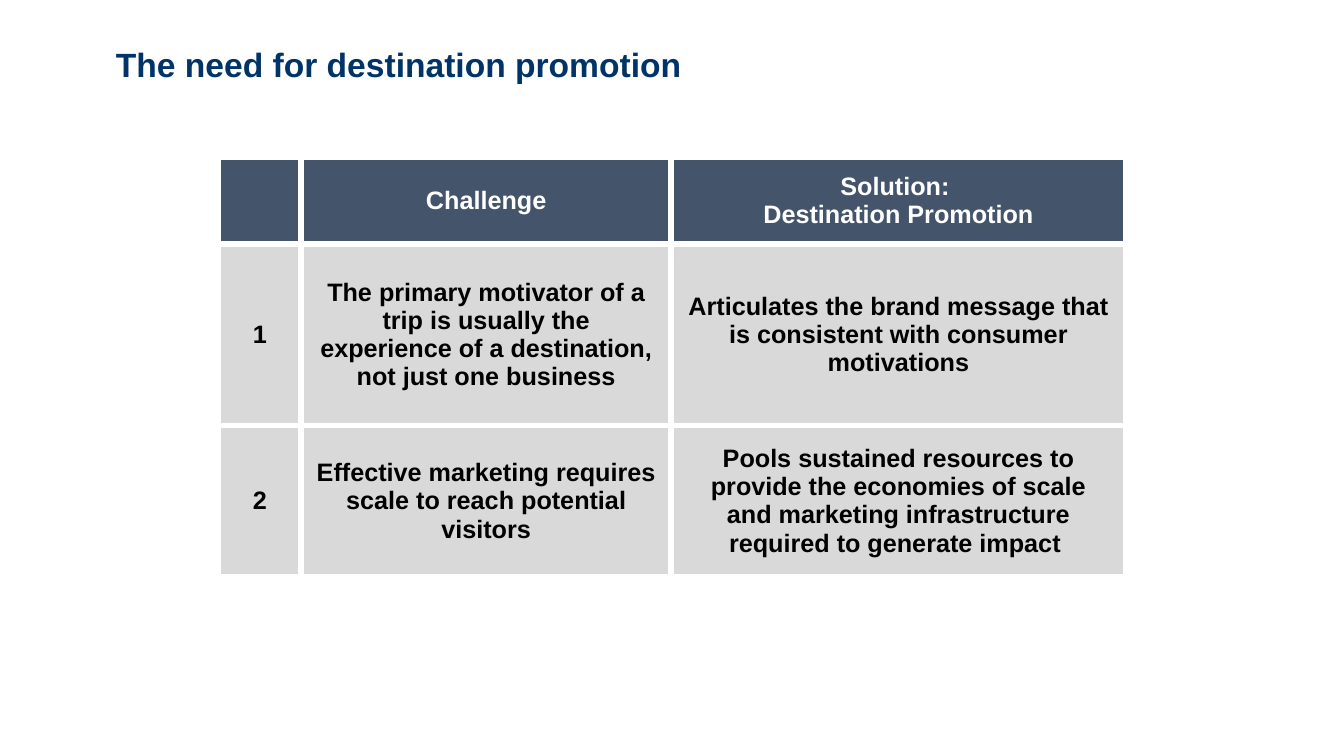
from lxml import etree
from pptx import Presentation
from pptx.dml.color import RGBColor
from pptx.enum.text import MSO_ANCHOR, PP_ALIGN
from pptx.oxml.ns import qn
from pptx.util import Pt

LEFT, CENTER = PP_ALIGN.LEFT, PP_ALIGN.CENTER
MIDDLE = MSO_ANCHOR.MIDDLE
TITLE_ONLY = 5

NAVY, SLATE, GREY, WHITE, BLACK = "003469", "44546A", "D9D9D9", "FFFFFF", "000000"

COLUMN_WIDTHS = [59, 264.2, 324.8]
ROW_HEIGHTS = [62, 129.6, 108]
ROWS = [
    ["", "Challenge", "Solution: \vDestination Promotion"],
    ["1",
     "The primary motivator of a trip is usually the experience of a destination, "
     "not just one business",
     "Articulates the brand message that is consistent with consumer motivations"],
    ["2",
     "Effective marketing requires scale to reach potential visitors",
     "Pools sustained resources to provide the economies of scale and marketing "
     "infrastructure required to generate impact "],
]


def color(hex_string):
    return RGBColor.from_string(hex_string)


def style_paragraph(paragraph, size, hex_string, align):
    paragraph.alignment = align
    font = paragraph.font
    font.name, font.size, font.bold = "Arial", Pt(size), True
    font.color.rgb = color(hex_string)


def add_borders(cell, hex_string, width):
    properties = cell._tc.get_or_add_tcPr()
    for position, side in enumerate(("a:lnL", "a:lnR", "a:lnT", "a:lnB")):
        line = etree.Element(qn(side), w=str(Pt(width)))
        fill = etree.SubElement(line, qn("a:solidFill"))
        etree.SubElement(fill, qn("a:srgbClr"), val=hex_string)
        properties.insert(position, line)


def place_title(slide, left, top, width, height):
    title = slide.shapes.title
    title.left, title.top, title.width, title.height = map(Pt, (left, top, width, height))
    frame = title.text_frame
    frame.text = "The need for destination promotion"
    frame.word_wrap = True
    frame.vertical_anchor = MIDDLE
    paragraph = frame.paragraphs[0]
    paragraph.line_spacing = 0.9
    style_paragraph(paragraph, 24, NAVY, LEFT)


def fill_cell(cell, text, is_header, is_wide_inset):
    cell.fill.solid()
    cell.fill.fore_color.rgb = color(SLATE if is_header else GREY)
    add_borders(cell, WHITE, 4.5)
    cell.vertical_anchor = MIDDLE
    side, end = (10.8, 10.8) if is_wide_inset else (7.2, 3.6)
    cell.margin_left = cell.margin_right = Pt(side)
    cell.margin_top = cell.margin_bottom = Pt(end)
    paragraph = cell.text_frame.paragraphs[0]
    if text:
        paragraph.text = text
    style_paragraph(paragraph, 18, WHITE if is_header else BLACK, CENTER)


def add_challenge_table(slide, left, top):
    table = slide.shapes.add_table(
        len(ROWS), len(COLUMN_WIDTHS), Pt(left), Pt(top),
        Pt(sum(COLUMN_WIDTHS)), Pt(sum(ROW_HEIGHTS))).table
    table.horz_banding = False
    for column, width in zip(table.columns, COLUMN_WIDTHS):
        column.width = Pt(width)
    for r, (texts, height) in enumerate(zip(ROWS, ROW_HEIGHTS)):
        table.rows[r].height = Pt(height)
        for c, text in enumerate(texts):
            fill_cell(table.cell(r, c), text, r == 0, r > 0 and c > 0)


def main():
    deck = Presentation()
    deck.slide_width, deck.slide_height = Pt(960), Pt(540)
    slide = deck.slides.add_slide(deck.slide_layouts[TITLE_ONLY])
    place_title(slide, 75.6, 29.5, 764.6, 36.7)
    add_challenge_table(slide, 156.2, 112.3)
    deck.save("out.pptx")


if __name__ == "__main__":
    main()
